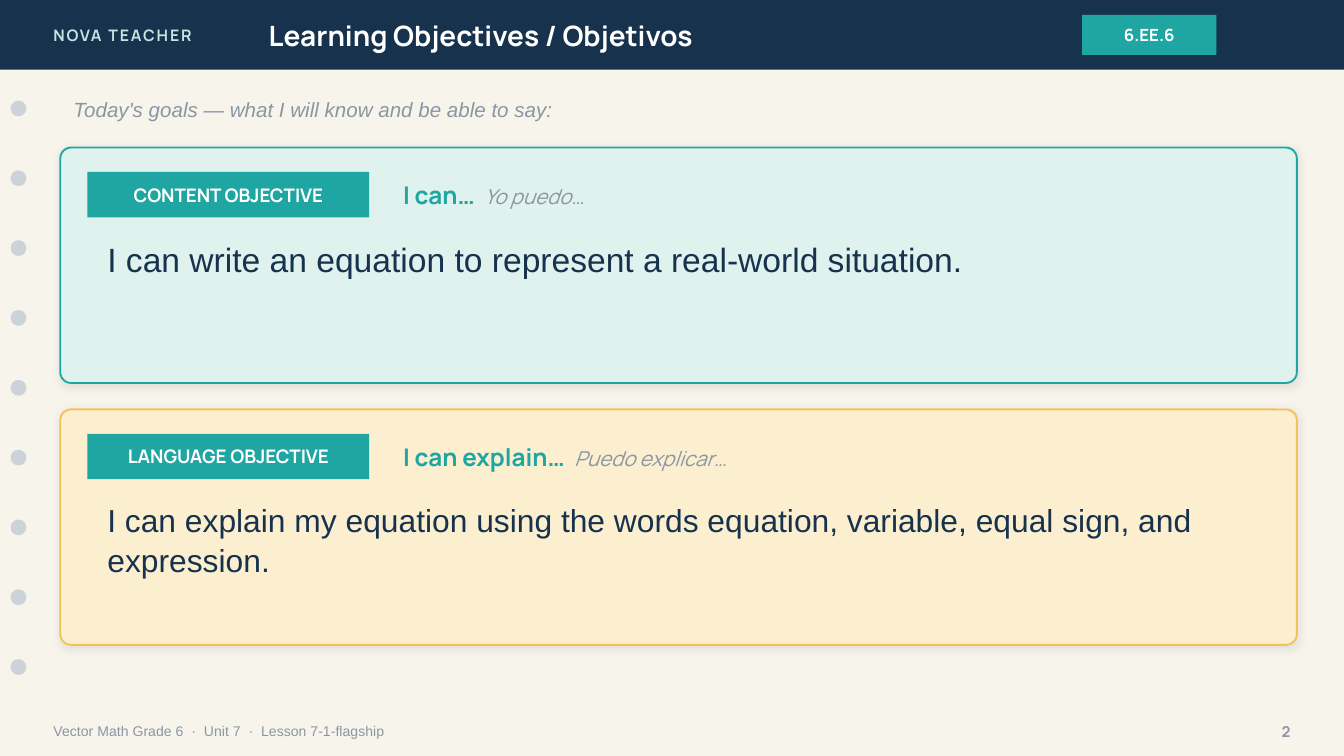
from lxml.etree import SubElement
from pptx import Presentation
from pptx.dml.color import RGBColor
from pptx.enum.shapes import MSO_SHAPE
from pptx.enum.text import MSO_ANCHOR, PP_ALIGN
from pptx.oxml.ns import qn
from pptx.util import Cm, Pt

NAVY, TEAL, GREY, WHITE = "17324D", "1FA6A2", "8A96A3", "FFFFFF"
HEADING, BODY = "Manrope", "Arial"
HEADER_HEIGHT = 1.32
DOT_COUNT, DOT_SIZE, DOT_STEP = 9, 0.3, 1.32
CARD_TOP, CARD_STEP = 2.79, 4.95

OBJECTIVES = [
    {"label": "CONTENT OBJECTIVE", "stem": "I can…  ", "translation": "Yo puedo…",
     "goal": "I can write an equation to represent a real-world situation.",
     "size": 18, "fill": "DFF2EE", "line": TEAL},
    {"label": "LANGUAGE OBJECTIVE", "stem": "I can explain…  ", "translation": "Puedo explicar…",
     "goal": "I can explain my equation using the words equation, variable, "
             "equal sign, and expression.",
     "size": 17, "fill": "FBEFD0", "line": "F2C15B"},
]


def color(value):
    return RGBColor.from_string(value)


def style(size, shade, name=HEADING, **extra):
    """Collect the font values of one span."""
    return {"size": Pt(size), "name": name, "color": shade, **extra}


class SlideBuilder:
    def __init__(self, deck, background):
        self.slide = deck.slides.add_slide(deck.slide_layouts[6])
        fill = self.slide.background.fill
        fill.solid()
        fill.fore_color.rgb = color(background)

    def shape(self, kind, place, fill):
        shape = self.slide.shapes.add_shape(kind, *map(Cm, place))
        shape.shadow.inherit = False
        shape.fill.solid()
        shape.fill.fore_color.rgb = color(fill)
        shape.line.fill.background()
        return shape

    def fill_text(self, shape, spans, align=PP_ALIGN.LEFT, anchor=MSO_ANCHOR.MIDDLE,
                  spacing=None):
        """Fill a shape with one paragraph of (text, style) spans."""
        frame = shape.text_frame
        frame.word_wrap = True
        frame.vertical_anchor = anchor
        para = frame.paragraphs[0]
        para.alignment = align
        para.line_spacing = spacing
        for text, values in spans:
            span = para.add_run()
            span.text = text
            for key, value in values.items():
                if key == "color":
                    span.font.color.rgb = color(value)
                elif key == "tracking":
                    span._r.get_or_add_rPr().set("spc", str(value * 100))
                else:
                    setattr(span.font, key, value)

    def text(self, place, *spans, **layout):
        box = self.slide.shapes.add_textbox(*map(Cm, place))
        self.fill_text(box, spans, **layout)

    def badge(self, place, label, size):
        badge = self.shape(MSO_SHAPE.RECTANGLE, place, TEAL)
        self.fill_text(badge, [(label, style(size, WHITE, bold=True))], align=PP_ALIGN.CENTER)

    def card(self, place, fill, line):
        """Draw a rounded panel with an outline and a soft shadow."""
        card = self.shape(MSO_SHAPE.ROUNDED_RECTANGLE, place, fill)
        card.adjustments[0] = 0.046
        card.line.color.rgb = color(line)
        card.line.width = Pt(1)
        effects = card._element.spPr.find(qn("a:effectLst"))
        shadow = SubElement(effects, qn("a:outerShdw"), blurRad=str(Pt(4)), dist=str(Pt(1)),
                            dir="5400000", algn="bl", rotWithShape="0")
        tint = SubElement(shadow, qn("a:srgbClr"), val="1C2E42")
        SubElement(tint, qn("a:alpha"), val="10000")

    def objective(self, top, item):
        self.card((1.14, top, 23.37, 4.45), item["fill"], item["line"])
        self.badge((1.65, top + 0.46, 5.33, 0.86), item["label"], 10)
        self.text((7.37, top + 0.46, 16.76, 0.86),
                  (item["stem"], style(13, TEAL, bold=True)),
                  (item["translation"], style(11, GREY, bold=False, italic=True)))
        self.text((1.78, top + 1.57, 22.1, 2.54),
                  (item["goal"], style(item["size"], NAVY, BODY)),
                  anchor=MSO_ANCHOR.TOP, spacing=1.05)


def main():
    deck = Presentation()
    deck.slide_width, deck.slide_height = Cm(25.4), Cm(14.29)
    page = SlideBuilder(deck, "F7F4EC")

    page.shape(MSO_SHAPE.RECTANGLE, (0, 0, 25.4, HEADER_HEIGHT), NAVY)
    page.text((0.76, 0, 6.1, HEADER_HEIGHT),
              ("NOVA TEACHER", style(8.5, "BFE6E2", bold=True, tracking=1)))
    page.text((4.83, 0, 14.22, HEADER_HEIGHT),
              ("Learning Objectives / Objetivos", style(15, WHITE, bold=True)))
    page.badge((20.45, 0.28, 2.54, 0.76), "6.EE.6", 9)

    for index in range(DOT_COUNT):
        page.shape(MSO_SHAPE.OVAL, (0.2, 1.9 + index * DOT_STEP, DOT_SIZE, DOT_SIZE), "CBD3D9")

    page.text((0.76, 13.47, 17.78, 0.71),
              ("Vector Math Grade 6  ·  Unit 7  ·  Lesson 7-1-flagship", style(7.5, GREY, BODY)))
    page.text((23.37, 13.47, 1.27, 0.71), ("2", style(8, GREY, bold=True)), align=PP_ALIGN.RIGHT)

    page.text((1.14, 1.68, 23.37, 0.76),
              ("Today's goals — what I will know and be able to say:",
               style(11, GREY, BODY, italic=True)))
    for index, item in enumerate(OBJECTIVES):
        page.objective(CARD_TOP + index * CARD_STEP, item)

    deck.save("out.pptx")


if __name__ == "__main__":
    main()
